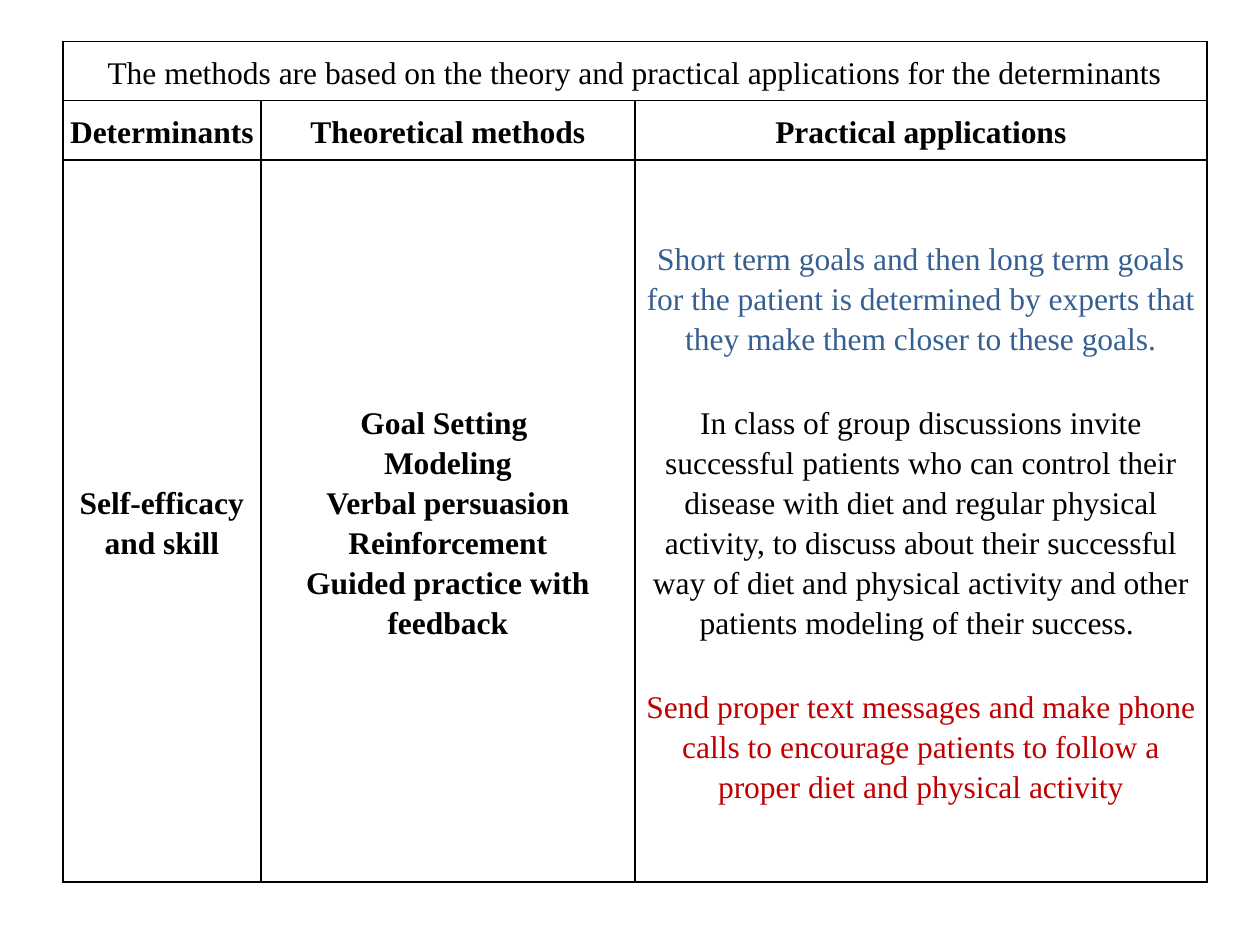
from lxml import etree
from pptx import Presentation
from pptx.dml.color import RGBColor
from pptx.enum.text import MSO_ANCHOR, PP_ALIGN
from pptx.oxml.ns import qn
from pptx.util import Inches, Pt

CENTER, MIDDLE = PP_ALIGN.CENTER, MSO_ANCHOR.MIDDLE
BLACK = RGBColor(0x00, 0x00, 0x00)
BLUE = RGBColor(0x37, 0x60, 0x92)
RED = RGBColor(0xC0, 0x00, 0x00)
FONT = "Times New Roman"

# Content: each cell is a list of (text, bold, colour, points before)
TITLE = "The methods are based on the theory and practical applications for the determinants"
HEADINGS = ["Determinants", "Theoretical methods", "Practical applications"]
METHODS = ["Goal Setting ", "Modeling", "Verbal persuasion Reinforcement",
           "Guided practice with feedback"]
APPLICATIONS = [
    ("Short term goals and then long term goals for the patient is determined by "
     "experts that they make them closer to these goals.", False, BLUE, 0),
    ("In class of group discussions invite successful patients who can control their "
     "disease with diet and regular physical activity, to discuss about their "
     "successful way of diet and physical activity and other patients modeling of "
     "their success. ", False, BLACK, 25),
    ("Send proper text messages and make phone calls to encourage patients to follow "
     "a proper diet and physical activity", False, RED, 25),
]


def bold_lines(*lines):
    return [(line, True, BLACK, 0) for line in lines]


ROWS = [
    [[(TITLE, False, BLACK, 0)], [], []],
    [bold_lines(heading) for heading in HEADINGS],
    [bold_lines("Self-efficacy and skill"), bold_lines(*METHODS), APPLICATIONS],
]
COL_WIDTHS = [1.57, 2.97, 4.54]
ROW_HEIGHTS = [0.47, 0.47, 5.73]


def set_borders(cell):
    tc_pr = cell._tc.get_or_add_tcPr()
    for i, side in enumerate(("a:lnL", "a:lnR", "a:lnT", "a:lnB")):
        ln = etree.Element(qn(side), w=str(Pt(1)))
        fill = etree.SubElement(ln, qn("a:solidFill"))
        etree.SubElement(fill, qn("a:srgbClr"), val=str(BLACK))
        tc_pr.insert(i, ln)


def fill_cell(cell, paragraphs):
    cell.vertical_anchor = MIDDLE
    cell.margin_left = cell.margin_right = Inches(0.05)
    cell.margin_top = cell.margin_bottom = 0
    cell.fill.background()
    set_borders(cell)
    tf = cell.text_frame
    for i, (text, bold, color, before) in enumerate(paragraphs):
        p = tf.paragraphs[0] if i == 0 else tf.add_paragraph()
        p.alignment = CENTER
        p.line_spacing = 1.15
        p.space_before = Pt(before)
        r = p.add_run()
        r.text = text
        r.font.name = FONT
        r.font.size = Pt(18)
        r.font.bold = bold
        r.font.color.rgb = color


prs = Presentation()
prs.slide_width, prs.slide_height = Inches(10), Inches(7.5)
s = prs.slides.add_slide(prs.slide_layouts[6])

# Table grid
table = s.shapes.add_table(
    len(ROWS), len(COL_WIDTHS), Inches(0.5), Inches(0.33),
    Inches(sum(COL_WIDTHS)), Inches(sum(ROW_HEIGHTS))).table
table.first_row = table.horz_banding = False
for column, width in zip(table.columns, COL_WIDTHS):
    column.width = Inches(width)
for row, height in zip(table.rows, ROW_HEIGHTS):
    row.height = Inches(height)

# Cells, with the title across the whole first row
table.cell(0, 0).merge(table.cell(0, len(COL_WIDTHS) - 1))
for row, contents in zip(table.rows, ROWS):
    for cell, paragraphs in zip(row.cells, contents):
        fill_cell(cell, paragraphs)

prs.save("out.pptx")
